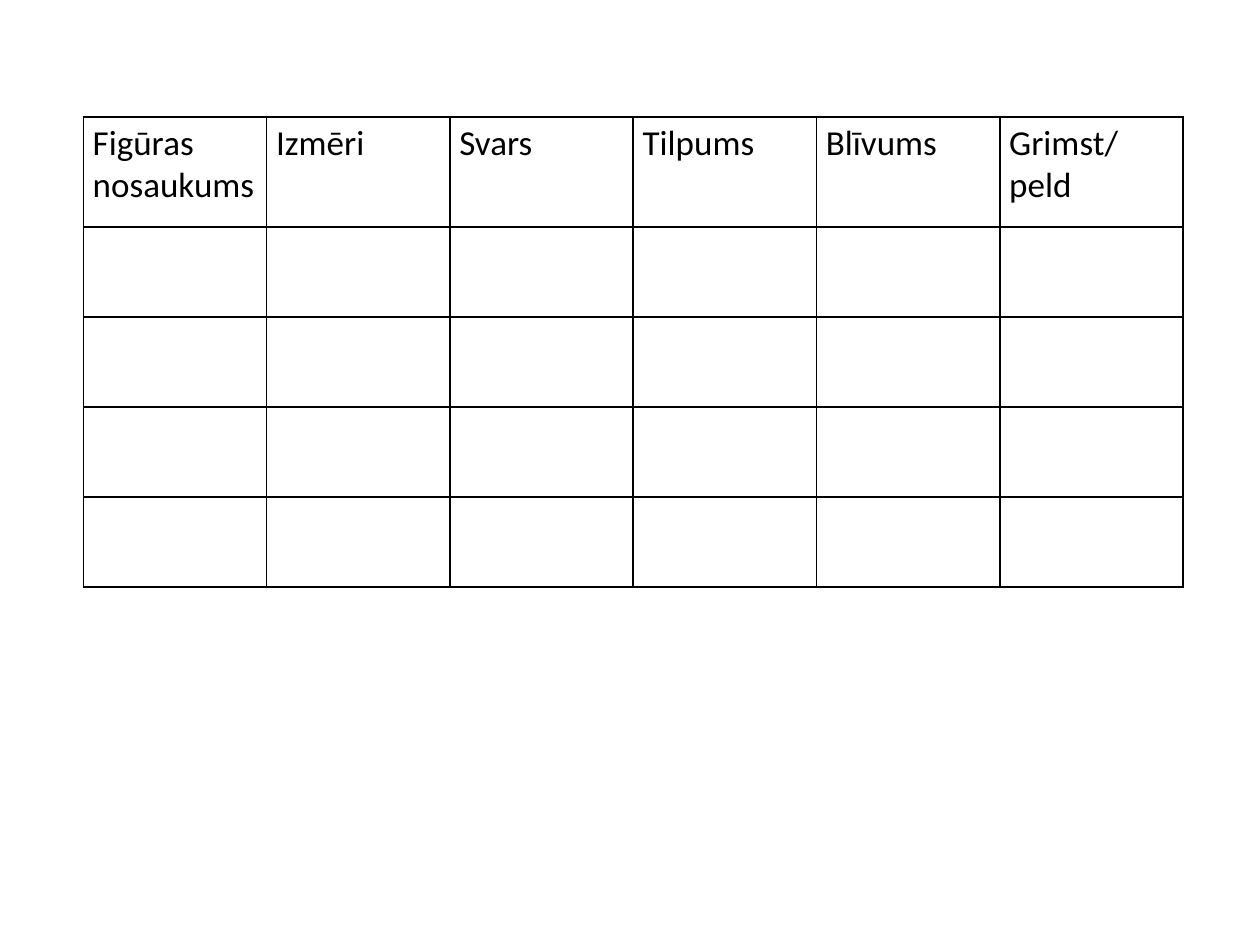
from dataclasses import dataclass

from lxml import etree
from pptx import Presentation
from pptx.dml.color import RGBColor
from pptx.oxml import ns
from pptx.util import Pt

HEADS = ["Figūras nosaukums", "Izmēri", "Svars", "Tilpums", "Blīvums", "Grimst/ peld"]


def hue(code):
    return RGBColor.from_string(code)


def write(frame, words, font="Calibri", size=20, color="000000"):
    para = frame.paragraphs[0]
    para.text = words
    para.font.name = font
    para.font.size = Pt(size)
    para.font.color.rgb = hue(color)


@dataclass
class Page:
    slide: object
    font: str = "Calibri"
    size: float = 20
    ink: str = "000000"
    line: float = 1

    def edge(self, cell):
        props = cell._tc.get_or_add_tcPr()
        for spot, side in enumerate(("lnL", "lnR", "lnT", "lnB")):
            rule = etree.Element(ns.qn("a:" + side), w=str(Pt(self.line)))
            fill = etree.SubElement(rule, ns.qn("a:solidFill"))
            etree.SubElement(fill, ns.qn("a:srgbClr"), val=self.ink)
            props.insert(spot, rule)

    def table(self, heads, left, top, width, rows):
        count = len(heads)
        frame = self.slide.shapes.add_table(
            len(rows), count, Pt(left), Pt(top), Pt(width), Pt(sum(rows)))
        grid = frame.table
        grid.first_row = grid.horz_banding = False
        for col in grid.columns:
            col.width = Pt(width / count)
        for row, high in zip(grid.rows, rows):
            row.height = Pt(high)
        for cell in grid.iter_cells():
            cell.fill.background()
            cell.margin_left = cell.margin_right = Pt(5.4)
            cell.margin_top = cell.margin_bottom = Pt(2.7)
            self.edge(cell)
        for cell, words in zip(grid.rows[0].cells, heads):
            write(cell.text_frame, words, font=self.font, size=self.size, color=self.ink)


def main():
    deck = Presentation()
    deck.slide_width, deck.slide_height = Pt(720), Pt(540)
    page = Page(deck.slides.add_slide(deck.slide_layouts[6]))
    page.table(HEADS, left=47.6, top=66.8, width=628.6, rows=[62.8] + [51.5] * 4)
    deck.save("out.pptx")


if __name__ == "__main__":
    main()
